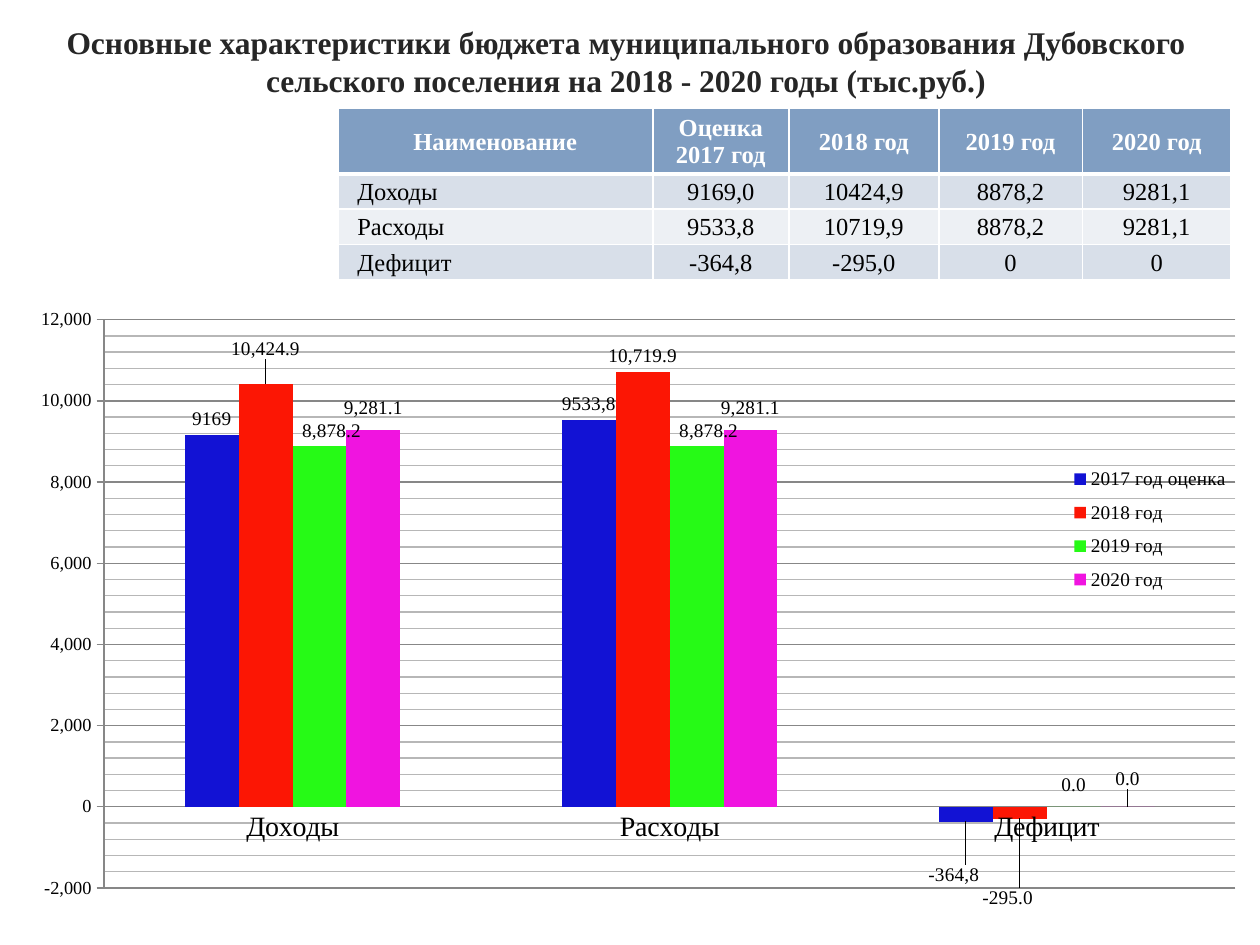
from pptx import Presentation
from pptx.chart.data import CategoryChartData
from pptx.dml.color import RGBColor
from pptx.enum.chart import (XL_CHART_TYPE, XL_LABEL_POSITION as LabelPos,
                             XL_LEGEND_POSITION, XL_TICK_LABEL_POSITION, XL_TICK_MARK as Tick)
from pptx.enum.text import MSO_ANCHOR, PP_ALIGN
from pptx.oxml import parse_xml
from pptx.oxml.ns import nsdecls, qn
from pptx.util import Pt

COLORS = {
    "title": "262626", "white": "FFFFFF", "black": "000000",
    "header": "809EC2", "band_dark": "D8DFE9", "band_light": "EDF0F4",
    "axis": "878787", "minor_grid": "B7B7B7",
    "2017": "1212D4", "2018": "FC1604", "2019": "26FA16", "2020": "F014E0",
}
FONT = "Times New Roman"
TITLE = ("Основные характеристики бюджета муниципального образования "
         "Дубовского сельского поселения на 2018 - 2020 годы (тыс.руб.)")
BUDGET_ROWS = [
    ["Наименование", "Оценка 2017 год", "2018 год", "2019 год", "2020 год"],
    ["Доходы", "9169,0", "10424,9", "8878,2", "9281,1"],
    ["Расходы", "9533,8", "10719,9", "8878,2", "9281,1"],
    ["Дефицит", "-364,8", "-295,0", "0", "0"],
]
COLUMN_WIDTHS = [180, 77.8, 85.7, 82, 85]
ROW_HEIGHTS = [37.4, 20.2, 20.2, 20.2]

# name, colour, label format, values, label offsets as shares of the chart
YEARS = [
    ("2017 год оценка", "2017", "General", (9169, 9533.8, -364.8),
     ((0, 0), (0, 0), (-0.01, 0.06))),
    ("2018 год", "2018", "#,##0.0", (10424.9, 10719.9, -295),
     ((0, -0.03), (0, 0), (-0.01, 0.1))),
    ("2019 год", "2019", "#,##0.0", (8878.2, 8878.2, 0),
     ((0.01, 0), (0.01, 0), (0, -0.01))),
    ("2020 год", "2020", "#,##0.0", (9281.1, 9281.1, 0),
     ((0, -0.01), (0, -0.01), (0, -0.02))),
]
TYPED_LABELS = {("2017", 1): "9533,8", ("2017", 2): "-364,8"}


def rgb(key):
    return RGBColor.from_string(COLORS[key])


def format_font(font, size, color="black", bold=False):
    for name, value in {"name": FONT, "size": Pt(size), "bold": bold}.items():
        setattr(font, name, value)
    font.color.rgb = rgb(color)


def manual_layout(x, y, w=None, h=None, inner=False, edge=True):
    target = '<c:layoutTarget val="inner"/>' if inner else ""
    modes = '<c:xMode val="edge"/><c:yMode val="edge"/>' if edge else ""
    sizes = f'<c:w val="{w}"/><c:h val="{h}"/>' if w else ""
    return parse_xml(
        f'<c:layout {nsdecls("c")}><c:manualLayout>{target}{modes}'
        f'<c:x val="{x}"/><c:y val="{y}"/>{sizes}</c:manualLayout></c:layout>')


def add_title(slide, left, top, width, height):
    title = slide.shapes.title
    box = {"left": left, "top": top, "width": width, "height": height}
    for name, value in box.items():
        setattr(title, name, Pt(value))
    frame = title.text_frame
    frame.text = TITLE
    frame.word_wrap = True
    frame.vertical_anchor = MSO_ANCHOR.MIDDLE
    paragraph = frame.paragraphs[0]
    paragraph.alignment = PP_ALIGN.CENTER
    run = paragraph.runs[0]
    format_font(run.font, 18, "title", True)
    # Soft shadow under the letters
    shadow = parse_xml(
        f'<a:effectLst {nsdecls("a")}><a:outerShdw blurRad="38100" dist="38100" dir="2700000">'
        '<a:srgbClr val="000000"><a:alpha val="43000"/></a:srgbClr></a:outerShdw></a:effectLst>')
    run._r.get_or_add_rPr().find(qn("a:solidFill")).addnext(shadow)


def add_cell_borders(cell, bottom):
    properties = cell._tc.get_or_add_tcPr()
    widths = {"L": 1, "R": 1, "T": 1, "B": bottom}
    for index, (side, width) in enumerate(widths.items()):
        properties.insert(index, parse_xml(
            f'<a:ln{side} {nsdecls("a")} w="{Pt(width)}"><a:solidFill>'
            f'<a:srgbClr val="{COLORS["white"]}"/></a:solidFill></a:ln{side}>'))


def add_budget_table(slide, left, top):
    table = slide.shapes.add_table(
        len(BUDGET_ROWS), len(COLUMN_WIDTHS), Pt(left), Pt(top),
        Pt(sum(COLUMN_WIDTHS)), Pt(sum(ROW_HEIGHTS))).table
    for column, width in zip(table.columns, COLUMN_WIDTHS):
        column.width = Pt(width)
    for r, texts in enumerate(BUDGET_ROWS):
        table.rows[r].height = Pt(ROW_HEIGHTS[r])
        is_header = r == 0
        fill = "header" if is_header else ("band_dark" if r % 2 else "band_light")
        for c, text in enumerate(texts):
            cell = table.cell(r, c)
            is_row_name = c == 0 and not is_header
            cell.text = text
            layout = {"vertical_anchor": MSO_ANCHOR.MIDDLE,
                      "margin_left": Pt(11.2 if is_row_name else 0.7),
                      "margin_right": Pt(0.7), "margin_top": Pt(0.7), "margin_bottom": 0}
            for name, value in layout.items():
                setattr(cell, name, value)
            paragraph = cell.text_frame.paragraphs[0]
            paragraph.alignment = PP_ALIGN.LEFT if is_row_name else PP_ALIGN.CENTER
            format_font(paragraph.runs[0].font, 14, "white" if is_header else "black", is_header)
            add_cell_borders(cell, 3 if is_header else 1)
            cell.fill.solid()
            cell.fill.fore_color.rgb = rgb(fill)


def add_point_label(series, index, key, number_format, offset):
    label = series.points[index].data_label
    typed = TYPED_LABELS.get((key, index))
    if typed:
        label.text_frame.text = typed
        format_font(label.text_frame.paragraphs[0].runs[0].font, 11)
    else:
        format_font(label.font, 11)
    label.position = LabelPos.OUTSIDE_END
    element = label._get_or_add_dLbl()
    element.find(qn("c:idx")).addnext(manual_layout(*offset, edge=False))
    if not typed:
        element.find(qn("c:txPr")).addprevious(parse_xml(
            f'<c:numFmt {nsdecls("c")} formatCode="{number_format}" sourceLinked="0"/>'))


def format_axes(chart):
    categories, values = chart.category_axis, chart.value_axis
    format_font(categories.tick_labels.font, 16)
    format_font(values.tick_labels.font, 10.5)
    categories.major_tick_mark = Tick.NONE
    categories.tick_label_position = XL_TICK_LABEL_POSITION.NEXT_TO_AXIS
    scale = {"minimum_scale": -2000, "maximum_scale": 12000, "major_unit": 2000,
             "minor_unit": 400, "has_major_gridlines": True, "has_minor_gridlines": True,
             "major_tick_mark": Tick.OUTSIDE, "minor_tick_mark": Tick.NONE}
    for name, value in scale.items():
        setattr(values, name, value)
    values.tick_labels.number_format = "#,##0"
    values.tick_labels.number_format_is_linked = False
    for part in (categories, values, values.major_gridlines):
        part.format.line.color.rgb = rgb("axis")
        part.format.line.width = Pt(0.75)
    values._element.find(qn("c:minorGridlines")).append(parse_xml(
        f'<c:spPr {nsdecls("c", "a")}><a:ln w="{Pt(0.75)}"><a:solidFill>'
        f'<a:srgbClr val="{COLORS["minor_grid"]}"/></a:solidFill></a:ln></c:spPr>'))


def add_budget_chart(slide, left, top, width, height):
    data = CategoryChartData()
    data.categories = [row[0] for row in BUDGET_ROWS[1:]]
    for name, _, _, values, _ in YEARS:
        data.add_series(name, values)
    chart = slide.shapes.add_chart(XL_CHART_TYPE.COLUMN_CLUSTERED, Pt(left), Pt(top),
                                   Pt(width), Pt(height), data).chart
    format_font(chart.font, 10.5)
    chart.has_title = False
    plot = chart.plots[0]
    for name, value in {"gap_width": 300, "overlap": 0, "vary_by_categories": False}.items():
        setattr(plot, name, value)
    format_axes(chart)

    # Columns and their labels
    for series, (_, key, number_format, _, offsets) in zip(plot.series, YEARS):
        series.format.fill.solid()
        series.format.fill.fore_color.rgb = rgb(key)
        series.invert_if_negative = False
        labels = series.data_labels
        labels.show_value = True
        labels.number_format = number_format
        labels.number_format_is_linked = False
        format_font(labels.font, 11)
        for index, offset in enumerate(offsets):
            add_point_label(series, index, key, number_format, offset)

    # Legend over the right end of the plot
    chart.has_legend = True
    legend = chart.legend
    legend.position = XL_LEGEND_POSITION.RIGHT
    legend.include_in_layout = False
    format_font(legend.font, 11)
    plot_area = chart._chartSpace.chart.plotArea
    for element in (legend._element, plot_area):
        for old in element.findall(qn("c:layout")):
            element.remove(old)
    legend._element.find(qn("c:legendPos")).addnext(manual_layout(0.86, 0.25, 0.14, 0.23))
    plot_area.insert(0, manual_layout(0.07, 0.035, 0.93, 0.895, inner=True))


def main():
    prs = Presentation()
    prs.slide_width, prs.slide_height = Pt(720), Pt(540)
    slide = prs.slides.add_slide(prs.slide_layouts[5])
    add_budget_chart(slide, 10.8, 170, 695.5, 363)
    add_title(slide, 13.7, 0, 688.3, 70)
    add_budget_table(slide, 193, 62)
    prs.save("out.pptx")


if __name__ == "__main__":
    main()
